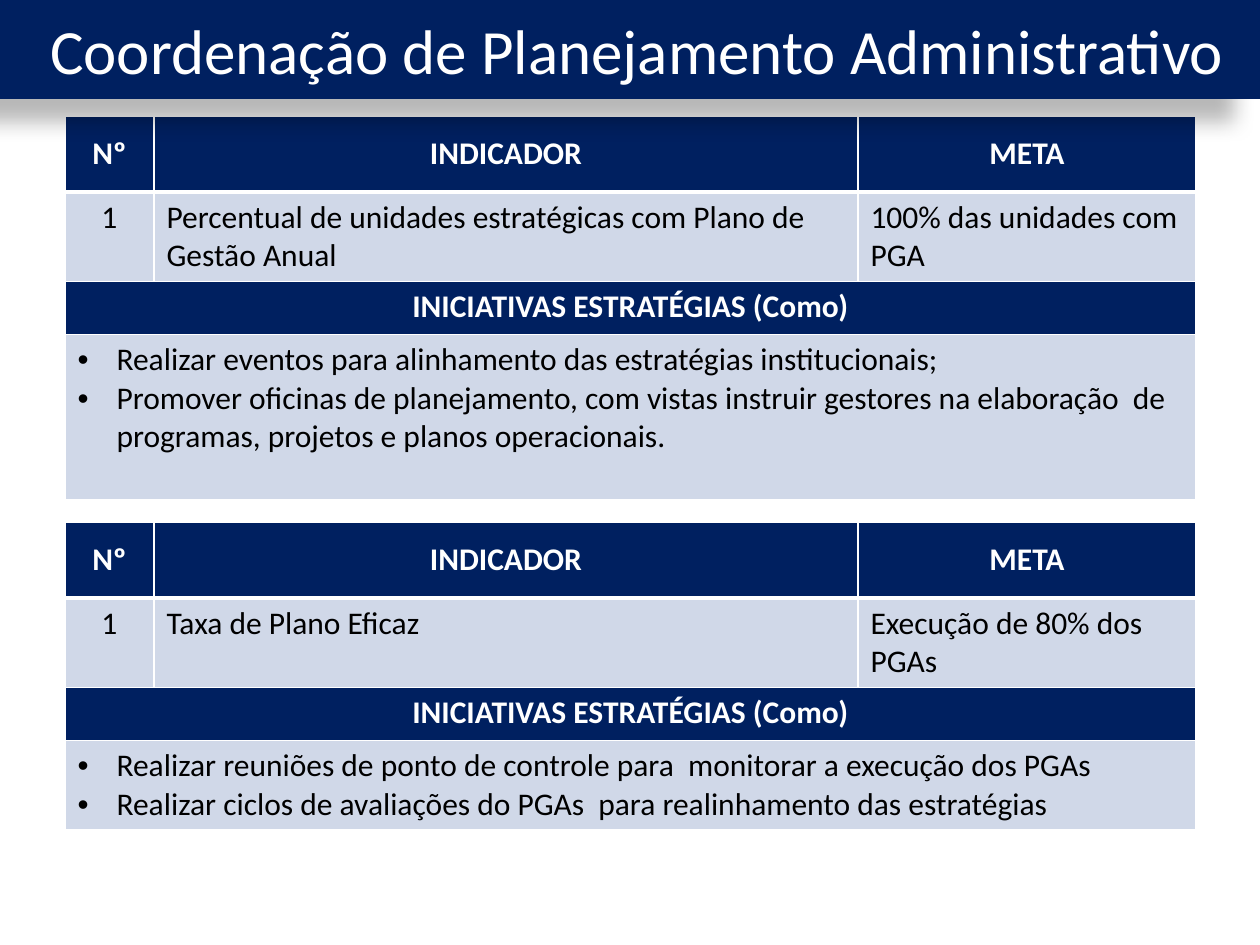
from dataclasses import dataclass

import lxml.etree
import pptx
import pptx.dml.color
import pptx.enum.shapes
import pptx.enum.text
import pptx.oxml
import pptx.oxml.ns
import pptx.util

COLORS = {"navy": "002060", "pale": "D0D8E8", "white": "FFFFFF", "black": "000000"}
FONT = "Calibri"
PX = 914400 / 126
COLUMNS = (89, 704, 338)
TABLE_LEFT = 65
INDENT = 39
THIN, THICK = 1, 3
CENTER = pptx.enum.text.PP_ALIGN.CENTER
LEFT = pptx.enum.text.PP_ALIGN.LEFT
MIDDLE = pptx.enum.text.MSO_ANCHOR.MIDDLE
TOP = pptx.enum.text.MSO_ANCHOR.TOP


@dataclass
class Plan:
    top: int
    row_heights: tuple[int, ...]
    indicator: str
    goal: str
    initiatives: tuple[str, ...]


PLANS = (
    Plan(
        116, (76, 89, 53, 165),
        "Percentual de unidades estratégicas com Plano de Gestão Anual",
        "100% das unidades com PGA",
        ("Realizar eventos para alinhamento das estratégias institucionais;",
         "Promover oficinas de planejamento, com vistas instruir gestores na "
         "elaboração  de programas, projetos e planos operacionais."),
    ),
    Plan(
        522, (76, 89, 53, 89),
        "Taxa de Plano Eficaz",
        "Execução de 80% dos PGAs",
        ("Realizar reuniões de ponto de controle para  monitorar a execução dos PGAs",
         "Realizar ciclos de avaliações do PGAs  para realinhamento das estratégias"),
    ),
)


def emu(px: int) -> int:
    return round(px * PX)


def rgb(name: str) -> pptx.dml.color.RGBColor:
    return pptx.dml.color.RGBColor.from_string(COLORS[name])


def add_child(parent, tag: str, **attributes):
    child = lxml.etree.SubElement(parent, pptx.oxml.ns.qn(tag))
    for name, value in attributes.items():
        child.set(name, str(value))
    return child


def write_text(frame, *lines: str, size: int = 18, color: str = "black",
               bold: bool = False, align=LEFT, bullet: bool = False) -> None:
    for index, line in enumerate(lines):
        para = frame.add_paragraph() if index else frame.paragraphs[0]
        para.alignment = align
        span = para.add_run()
        span.text = line
        span.font.name = FONT
        span.font.size = pptx.util.Pt(size)
        span.font.bold = bold
        span.font.color.rgb = rgb(color)
        if bullet:
            settings = para._p.get_or_add_pPr()
            settings.set("marL", str(emu(INDENT)))
            settings.set("indent", str(-emu(INDENT)))
            add_child(settings, "a:buFont", typeface="Arial")
            add_child(settings, "a:buChar", char="•")


def style_cell(cell, fill: str, top: int = THIN, bottom: int = THIN, anchor=TOP) -> None:
    settings = cell._tc.get_or_add_tcPr()
    for side, width in (("L", THIN), ("R", THIN), ("T", top), ("B", bottom)):
        line = add_child(settings, f"a:ln{side}", w=pptx.util.Pt(width))
        add_child(add_child(line, "a:solidFill"), "a:srgbClr", val=COLORS["white"])
    cell.fill.solid()
    cell.fill.fore_color.rgb = rgb(fill)
    cell.vertical_anchor = anchor


def draw_plan(page, plan: Plan) -> None:
    frame = page.shapes.add_table(
        len(plan.row_heights), len(COLUMNS), emu(TABLE_LEFT), emu(plan.top),
        emu(sum(COLUMNS)), emu(sum(plan.row_heights)))
    table = frame.table
    for column, width in zip(table.columns, COLUMNS):
        column.width = emu(width)
    for row, height in zip(table.rows, plan.row_heights):
        row.height = emu(height)

    for index, title in enumerate(("Nº", "INDICADOR", "META")):
        cell = table.cell(0, index)
        style_cell(cell, "navy", bottom=THICK, anchor=MIDDLE)
        write_text(cell.text_frame, title, color="white", bold=True, align=CENTER)
    for index, value in enumerate(("1", plan.indicator, plan.goal)):
        cell = table.cell(1, index)
        style_cell(cell, "pale", top=THICK)
        write_text(cell.text_frame, value, align=LEFT if index else CENTER)

    for row, fill in ((2, "navy"), (3, "pale")):
        table.cell(row, 0).merge(table.cell(row, len(COLUMNS) - 1))
        for index in range(len(COLUMNS)):
            style_cell(table.cell(row, index), fill)
    write_text(table.cell(2, 0).text_frame, "INICIATIVAS ESTRATÉGIAS (Como)",
               color="white", bold=True, align=CENTER)
    write_text(table.cell(3, 0).text_frame, *plan.initiatives, bullet=True)


def draw_banner(page, title: str) -> None:
    box = page.shapes.add_shape(
        pptx.enum.shapes.MSO_SHAPE.RECTANGLE, 0, 0, emu(1260), emu(99))
    box.fill.solid()
    box.fill.fore_color.rgb = rgb("navy")
    box.line.fill.background()
    box.shadow.inherit = False
    effects = box._element.spPr.find(pptx.oxml.ns.qn("a:effectLst"))
    shadow = add_child(effects, "a:outerShdw", blurRad=pptx.util.Pt(11.8),
                       dist=pptx.util.Pt(19.7), dir=141 * 60000,
                       algn="tl", rotWithShape=0)
    tint = add_child(shadow, "a:srgbClr", val=COLORS["black"])
    add_child(tint, "a:alpha", val=28000)
    box.text_frame.word_wrap = True
    box.text_frame.vertical_anchor = MIDDLE
    write_text(box.text_frame, title, size=36, color="white", align=CENTER)


def main() -> None:
    deck = pptx.Presentation()
    deck.slide_width = emu(1260)
    deck.slide_height = emu(945)
    page = deck.slides.add_slide(deck.slide_layouts[6])
    first, second = PLANS
    draw_plan(page, first)
    draw_banner(page, " Coordenação de Planejamento Administrativo")
    draw_plan(page, second)
    deck.save("out.pptx")


if __name__ == "__main__":
    main()
